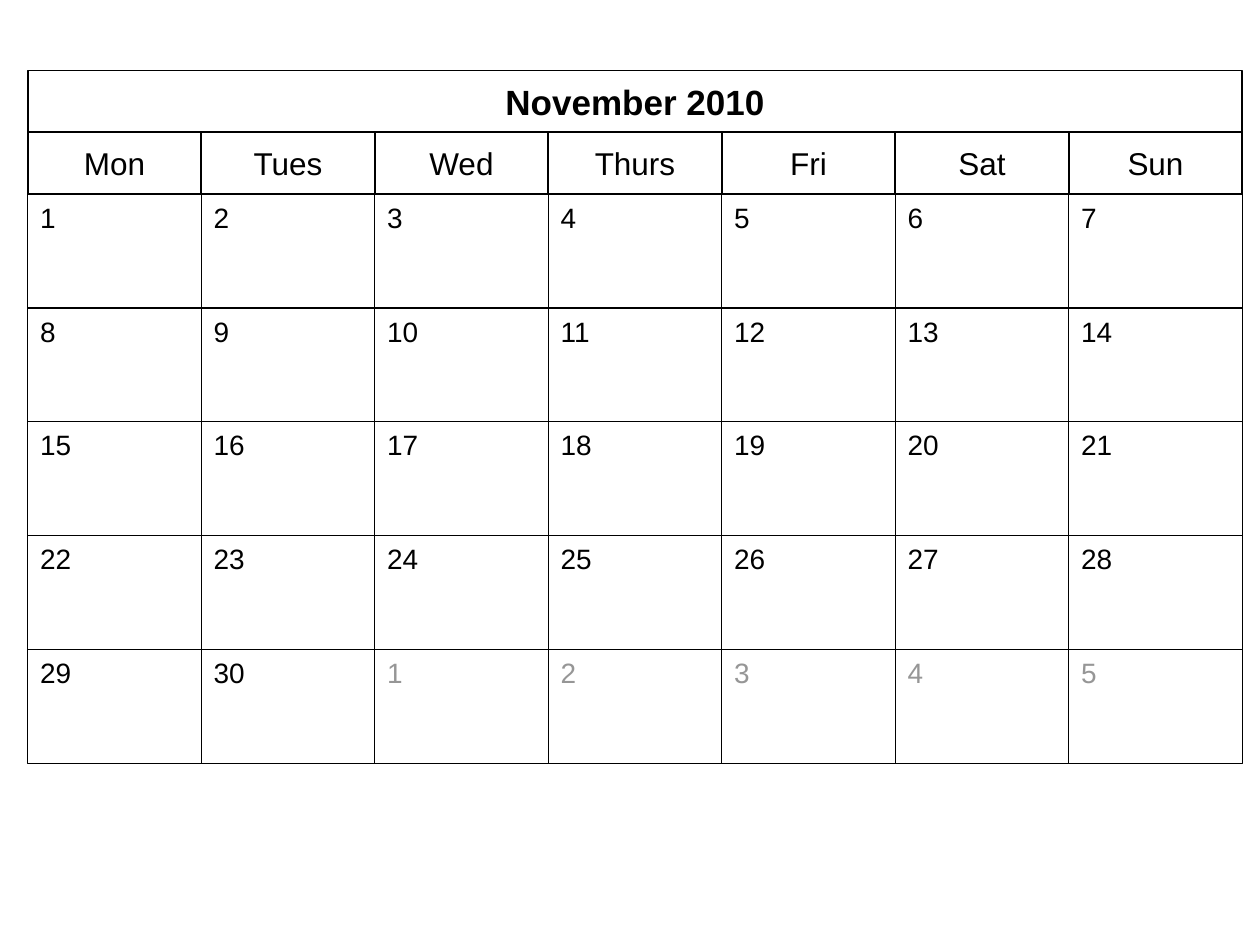
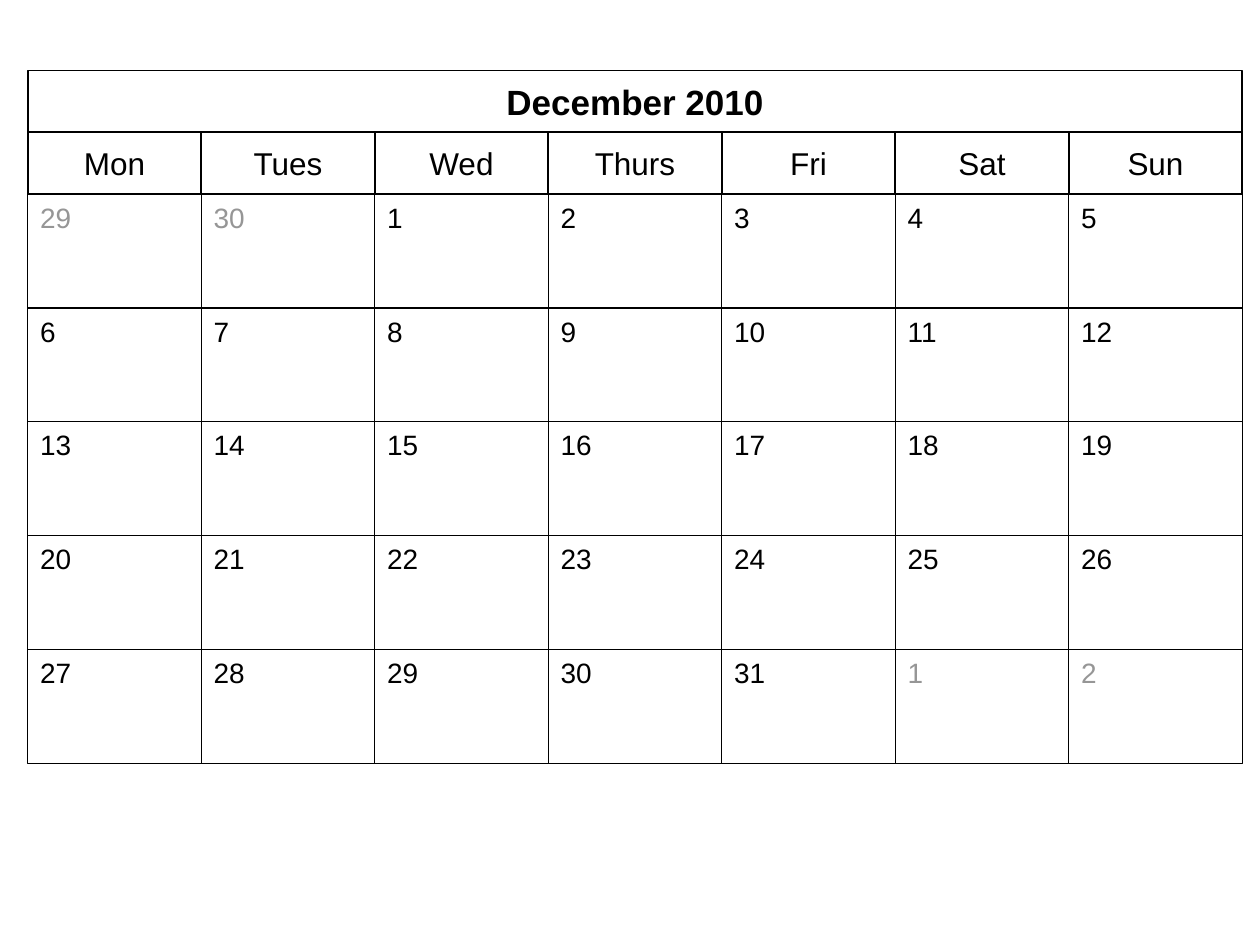
from pptx import Presentation
from pptx.dml.color import RGBColor
from pptx.enum.shapes import MSO_SHAPE
from pptx.enum.text import MSO_ANCHOR, MSO_AUTO_SIZE, PP_ALIGN
from pptx.util import Inches, Pt

BLACK = RGBColor(0x00, 0x00, 0x00)
GREY = RGBColor(0x96, 0x96, 0x96)
WHITE = RGBColor(0xFF, 0xFF, 0xFF)
FONT = "Arial"

WEEKDAYS = ["Mon", "Tues", "Wed", "Thurs", "Fri", "Sat", "Sun"]
WEEKS = 5
# month, days in the previous month, days in this month, cells before day 1
MONTHS = [
    ("November 2010", 31, 30, 0),
    ("December 2010", 30, 31, 2),
]

LEFT, TOP = Inches(0.22), Inches(0.56)
WIDTH, HEIGHT = Inches(9.64), Inches(5.5)
BAND_HEIGHT = Inches(0.49)
DAY_WIDTH = WIDTH / len(WEEKDAYS)
WEEKS_TOP = TOP + 2 * BAND_HEIGHT
WEEK_HEIGHT = (HEIGHT - 2 * BAND_HEIGHT) / WEEKS


def write(cell, text, size, color=BLACK, bold=False):
    run = cell.text_frame.paragraphs[0].add_run()
    run.text = text
    run.font.name = FONT
    run.font.size = Pt(size)
    run.font.bold = bold
    run.font.color.rgb = color


def style_band(cell):
    """Give a heading cell its white fill, outline and centred text."""
    cell.fill.solid()
    cell.fill.fore_color.rgb = WHITE
    cell.line.color.rgb = BLACK
    cell.line.width = Pt(1)
    frame = cell.text_frame
    frame.auto_size = MSO_AUTO_SIZE.NONE
    frame.word_wrap = True
    frame.vertical_anchor = MSO_ANCHOR.MIDDLE
    frame.margin_left = frame.margin_right = Inches(0.1)
    frame.margin_top = frame.margin_bottom = Inches(0.02)
    frame.paragraphs[0].alignment = PP_ALIGN.CENTER


prs = Presentation()
prs.slide_width, prs.slide_height = Inches(10), Inches(7.5)
title_only = prs.slide_layouts[5]

for month, previous_length, length, leading in MONTHS:
    slide = prs.slides.add_slide(title_only)

    title = slide.shapes.title
    title.left, title.top = LEFT, TOP
    title.width, title.height = WIDTH, BAND_HEIGHT
    style_band(title)
    write(title, month, 20, bold=True)

    for column, weekday in enumerate(WEEKDAYS):
        x = int(LEFT + column * DAY_WIDTH)
        heading = slide.shapes.add_shape(
            MSO_SHAPE.RECTANGLE, x, TOP + BAND_HEIGHT, int(DAY_WIDTH), BAND_HEIGHT)
        heading.shadow.inherit = False
        style_band(heading)
        write(heading, weekday, 18)

        for week in range(WEEKS):
            date = week * len(WEEKDAYS) + column - leading + 1
            in_month = 1 <= date <= length
            if date < 1:
                date += previous_length
            elif date > length:
                date -= length

            day = slide.shapes.add_shape(
                MSO_SHAPE.RECTANGLE, x, int(WEEKS_TOP + week * WEEK_HEIGHT),
                int(DAY_WIDTH), int(WEEK_HEIGHT))
            day.shadow.inherit = False
            day.fill.background()
            day.line.color.rgb = BLACK
            day.line.width = Pt(0.75)
            day.text_frame.word_wrap = True
            day.text_frame.vertical_anchor = MSO_ANCHOR.TOP
            day.text_frame.paragraphs[0].alignment = PP_ALIGN.LEFT
            write(day, str(date), 16, BLACK if in_month else GREY)

prs.save("out.pptx")
